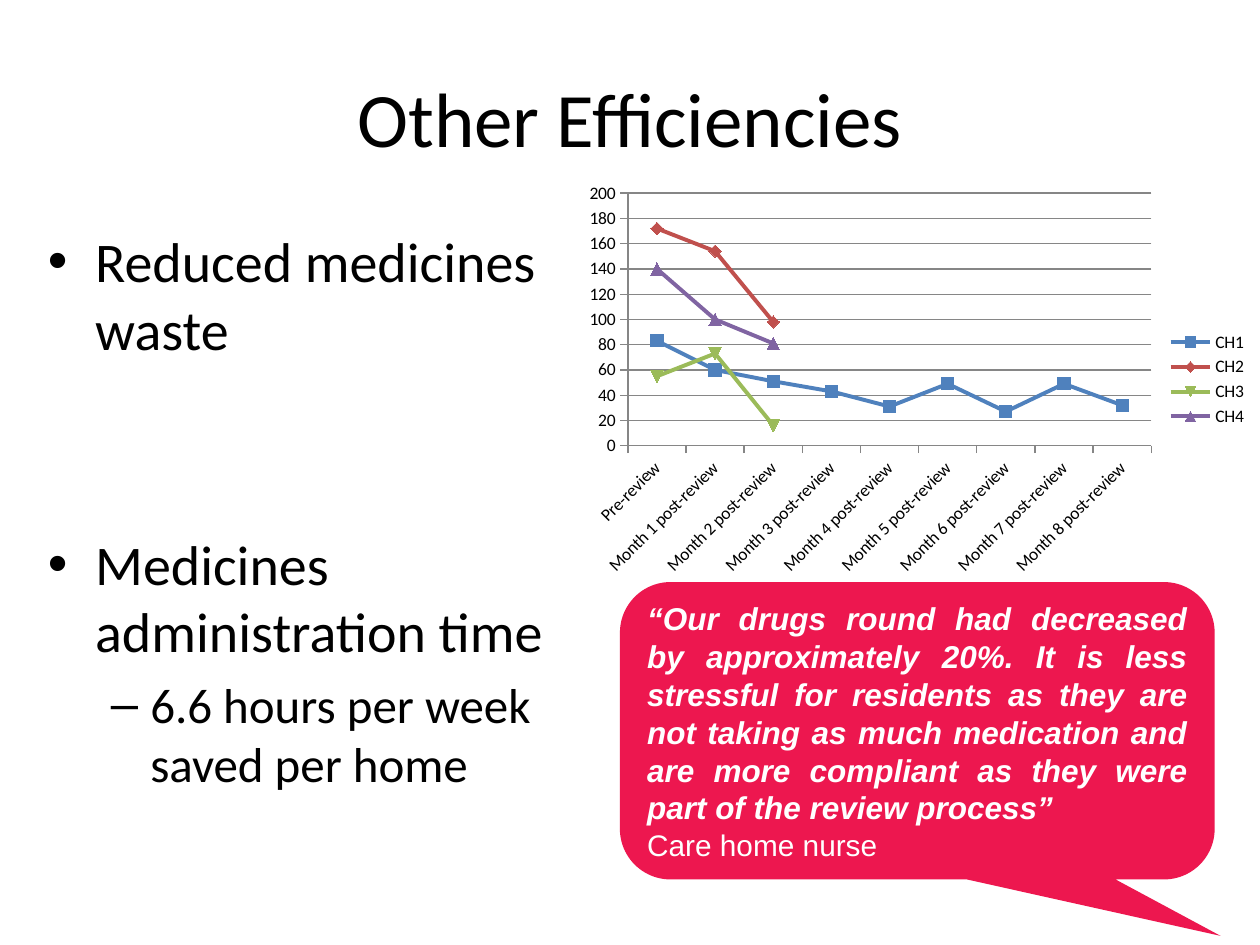
from pptx import Presentation
from pptx.chart.data import CategoryChartData
from pptx.dml.color import RGBColor
from pptx.enum.chart import XL_CHART_TYPE, XL_LEGEND_POSITION, XL_TICK_MARK
from pptx.enum.shapes import MSO_SHAPE
from pptx.enum.text import MSO_ANCHOR, MSO_AUTO_SIZE, PP_ALIGN
from pptx.util import Inches, Pt

LINE_MARKERS = XL_CHART_TYPE.LINE_MARKERS
LEGEND_RIGHT = XL_LEGEND_POSITION.RIGHT
TICK_OUTSIDE = XL_TICK_MARK.OUTSIDE
CALLOUT = MSO_SHAPE.ROUNDED_RECTANGULAR_CALLOUT
MIDDLE = MSO_ANCHOR.MIDDLE
NO_AUTOFIT = MSO_AUTO_SIZE.NONE
CENTER, LEFT, JUSTIFY = PP_ALIGN.CENTER, PP_ALIGN.LEFT, PP_ALIGN.JUSTIFY

COLORS = {
    "text": "000000", "white": "FFFFFF", "callout": "ED174F", "axis": "868686",
    "CH1": "4F81BD", "CH2": "C0504D", "CH3": "9BBB59", "CH4": "8064A2",
}
TITLE = "Other Efficiencies"
BULLETS = [
    {"text": "Reduced medicines waste", "level": 0, "size": 32, "before": 0},
    {"text": "Medicines administration time", "level": 0, "size": 32, "before": 96},
    {"text": "6.6 hours per week saved per home", "level": 1, "size": 28, "before": 6},
]
CATEGORIES = ["Pre-review"] + [f"Month {month} post-review" for month in range(1, 9)]
WASTE = {
    "CH1": [83, 60, 51, 43, 31, 49, 27, 49, 32],
    "CH2": [172, 154, 98],
    "CH3": [55, 73, 16],
    "CH4": [140, 100, 81],
}
QUOTE = (
    "“Our drugs round had decreased by approximately 20%. It is less stressful "
    "for residents as they are not taking as much medication and are more "
    "compliant as they were part of the review process”"
)
SPEAKER = "Care home nurse"


def color(name):
    return RGBColor.from_string(COLORS[name])


def place(shape, left, top, width, height):
    shape.left, shape.top = Inches(left), Inches(top)
    shape.width, shape.height = Inches(width), Inches(height)


def style(font, size, name="Calibri", color_name="text"):
    font.name, font.size = name, Pt(size)
    font.color.rgb = color(color_name)


def add_run(paragraph, text, size, **options):
    run = paragraph.add_run()
    run.text = text
    style(run.font, size, **options)
    return run


def add_title(slide):
    title = slide.shapes.title
    place(title, 0.5, 0.3, 9, 1.25)
    frame = title.text_frame
    frame.auto_size, frame.vertical_anchor = NO_AUTOFIT, MIDDLE
    frame.paragraphs[0].alignment = CENTER
    add_run(frame.paragraphs[0], TITLE, 44)


def add_bullets(slide):
    body = slide.placeholders[1]
    place(body, 0.28, 1.75, 4.66, 4.95)
    frame = body.text_frame
    frame.auto_size = NO_AUTOFIT
    for index, bullet in enumerate(BULLETS):
        paragraph = frame.add_paragraph() if index else frame.paragraphs[0]
        paragraph.level = bullet["level"]
        paragraph.space_before = Pt(bullet["before"])
        add_run(paragraph, bullet["text"], bullet["size"])


def add_waste_chart(slide):
    data = CategoryChartData()
    data.categories = CATEGORIES
    for name, values in WASTE.items():
        data.add_series(name, values + [None] * (len(CATEGORIES) - len(values)))
    chart = slide.shapes.add_chart(
        LINE_MARKERS, Inches(4.57), Inches(1.39), Inches(5.43), Inches(3.24), data
    ).chart
    style(chart.font, 10)
    chart.has_title = False
    chart.has_legend = True
    chart.legend.position = LEGEND_RIGHT
    chart.legend.include_in_layout = False

    for axis in (chart.category_axis, chart.value_axis):
        axis.major_tick_mark = TICK_OUTSIDE
        axis.format.line.color.rgb = color("axis")
        style(axis.tick_labels.font, 10)
    chart.category_axis._element.txPr.bodyPr.set("rot", "-2700000")
    scale = chart.value_axis
    scale.minimum_scale, scale.maximum_scale, scale.major_unit = 0, 200, 20
    scale.has_major_gridlines = True
    scale.major_gridlines.format.line.color.rgb = color("axis")

    for series in chart.plots[0].series:
        series.smooth = False
        series.format.line.width = Pt(2.25)
        series.format.line.color.rgb = color(series.name)
        series.marker.size = 7
        fill = series.marker.format.fill
        fill.solid()
        fill.fore_color.rgb = color(series.name)
        series.marker.format.line.color.rgb = color(series.name)


def add_quote(slide):
    callout = slide.shapes.add_shape(
        CALLOUT, Inches(4.92), Inches(4.62), Inches(4.72), Inches(2.36)
    )
    for index, adjustment in enumerate((0.51, 0.69, 0.17)):
        callout.adjustments[index] = adjustment
    callout.shadow.inherit = False
    callout.fill.solid()
    callout.fill.fore_color.rgb = color("callout")
    callout.line.fill.background()
    frame = callout.text_frame
    frame.word_wrap, frame.vertical_anchor = True, MIDDLE
    quote, speaker = frame.paragraphs[0], frame.add_paragraph()
    quote.alignment, speaker.alignment = JUSTIFY, LEFT
    run = add_run(quote, QUOTE, 18, name="Arial", color_name="white")
    run.font.bold = run.font.italic = True
    add_run(speaker, SPEAKER, 17, name="Arial", color_name="white")


def main():
    presentation = Presentation()
    presentation.slide_width, presentation.slide_height = Inches(10), Inches(7.5)
    slide = presentation.slides.add_slide(presentation.slide_layouts[1])
    add_title(slide)
    add_bullets(slide)
    add_waste_chart(slide)
    add_quote(slide)
    presentation.save("out.pptx")


if __name__ == "__main__":
    main()
